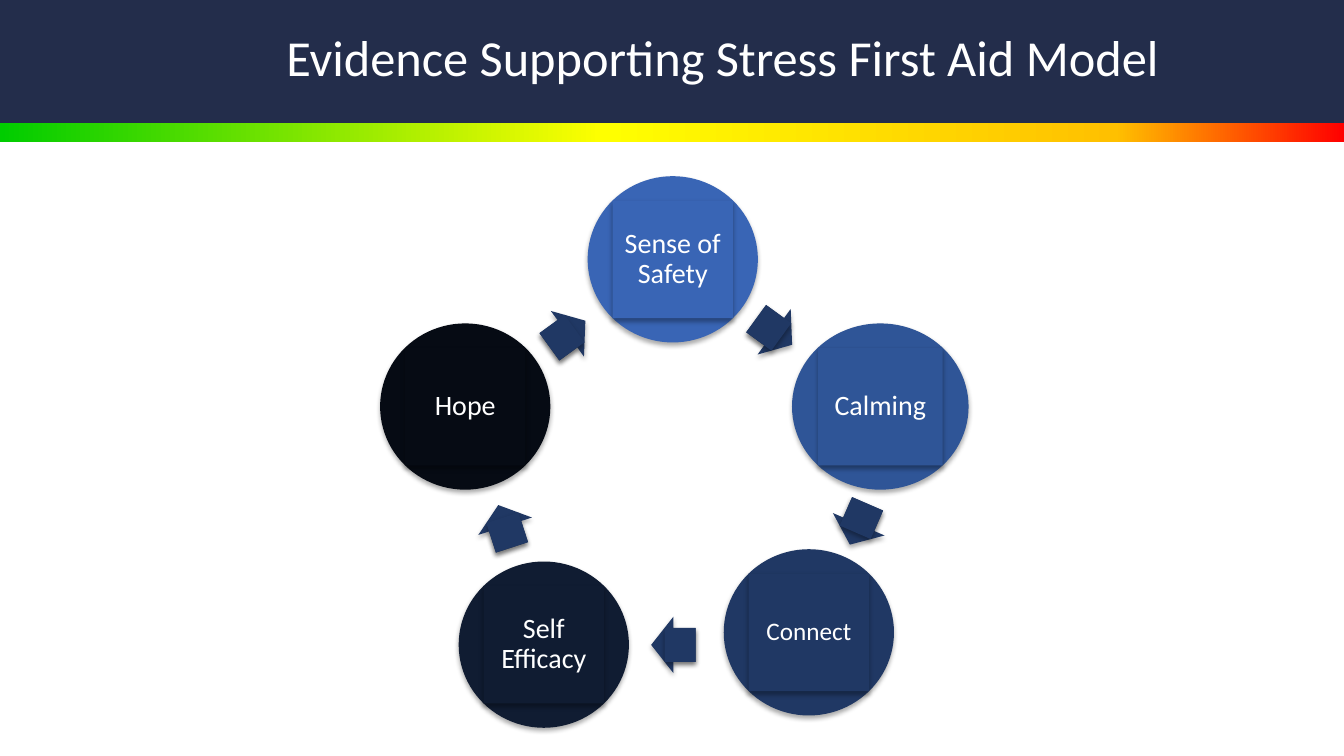
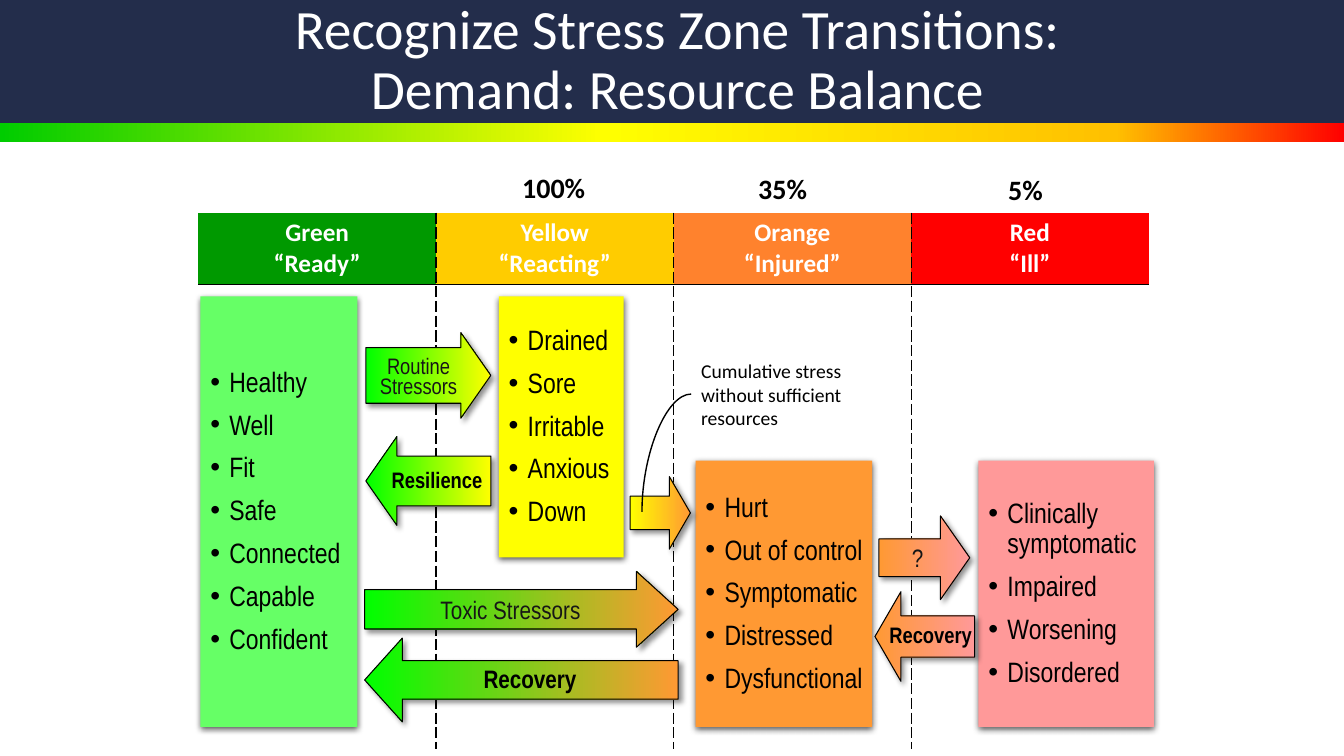
import math
from dataclasses import dataclass
from typing import Optional, Sequence

from lxml import etree
from pptx import Presentation
from pptx import util as u
from pptx.dml.color import RGBColor
from pptx.enum import shapes, text
from pptx.oxml.ns import qn

Cm, Pt = u.Cm, u.Pt
PRESET, ALIGN, ANCHOR = shapes.MSO_SHAPE, text.PP_ALIGN, text.MSO_ANCHOR
BODY_FONT, ZONE_FONT = "Calibri", "Arial Narrow"
NO_TABLE_STYLE = "{2D5ABB26-0587-4C30-8999-92F81FD0307C}"
COLORS = {
    "navy": "232D4B", "white": "FFFFFF", "black": "000000", "ink": "161616",
    "safety": "3965B5", "calming": "2F5597", "connect": "203864",
    "efficacy": "101C32", "hope": "060B14",
    "green head": "009900", "yellow head": "FFCC00", "orange head": "FF822D", "red": "FF0000",
    "green list": "66FF66", "yellow": "FFFF00", "orange": "FF9933", "pink": "FF9999",
    "lime": "00FF00", "band green": "00CC00", "band amber": "FFC000",
}
SPECTRUM = [(0, "band green"), (45, "yellow"), (83, "band amber"), (100, "red")]


@dataclass(frozen=True)
class Box:
    left: float
    top: float
    width: float
    height: float

    def lengths(self) -> tuple:
        return Cm(self.left), Cm(self.top), Cm(self.width), Cm(self.height)


@dataclass(frozen=True)
class Shadow:
    alpha: int
    blur: float
    distance: float
    angle: int


@dataclass(frozen=True)
class Style:
    size: float
    color: str = "black"
    font: str = BODY_FONT
    bold: bool = False
    align: ALIGN = ALIGN.CENTER
    spacing: float = 0.9


@dataclass(frozen=True)
class Step:
    label: str
    box: Box
    color: str
    size: int = 20


@dataclass(frozen=True)
class CycleArrow:
    left: float
    top: float
    angle: float


@dataclass(frozen=True)
class Zone:
    name: str
    state: str
    head_color: str
    list_color: str
    box: Box
    signs: Sequence[str]
    wrap: bool = False


@dataclass(frozen=True)
class Transition:
    label: str
    box: Box
    start: str
    end: str
    shaft: float
    head: float
    size: int = 18
    back: bool = False


CYCLE_SHADOW = Shadow(32, 3.5, 2.2, 90)
LIST_SHADOW = Shadow(63, 4.5, 1.5, 90)
ARROW_SHADOW = Shadow(43, 4, 3, 45)

STEPS = [
    Step("Sense of Safety", Box(14.81, 4.44, 4.29, 4.19), "safety"),
    Step("Calming", Box(19.96, 8.15, 4.45, 4.19), "calming"),
    Step("Connect", Box(18.24, 13.84, 4.29, 4.19), "connect", 18),
    Step("Self Efficacy", Box(11.56, 14.15, 4.29, 4.19), "efficacy"),
    Step("Hope", Box(9.58, 8.15, 4.29, 4.19), "hope"),
]
CYCLE_ARROWS = [
    CycleArrow(18.95, 7.65, 36), CycleArrow(21.08, 12.5, 113.5), CycleArrow(16.41, 15.54, 180),
    CycleArrow(12.17, 12.55, 252), CycleArrow(13.74, 7.7, 324),
]
ZONES = [
    Zone("Green", "“Ready”", "green head", "green list", Box(5.05, 7.47, 3.96, 10.85),
         ["Healthy", "Well", "Fit", "Safe", "Connected", "Capable", "Confident"]),
    Zone("Yellow", "“Reacting”", "yellow head", "yellow", Box(12.57, 7.47, 3.15, 6.58),
         ["Drained", "Sore", "Irritable", "Anxious", "Down"]),
    Zone("Orange", "“Injured”", "orange head", "orange", Box(17.53, 11.61, 4.45, 6.71),
         ["Hurt", "Out of control", "Symptomatic", "Distressed", "Dysfunctional"]),
    Zone("Red", "“Ill”", "red", "pink", Box(24.66, 11.61, 4.42, 6.71),
         ["Clinically symptomatic", "Impaired", "Worsening", "Disordered"], wrap=True),
]
TRANSITIONS = [
    Transition("Routine Stressors", Box(9.22, 8.38, 3.15, 2.16), "lime", "yellow", 0.65, 0.35, 16),
    Transition("Toxic Stressors", Box(9.19, 14.4, 7.9, 1.91), "lime", "orange", 0.52, 0.55),
    Transition("Resilience", Box(9.22, 11, 3.15, 2.24), "lime", "yellow", 0.56, 0.35, 16, True),
    Transition("Recovery", Box(9.19, 16.08, 7.9, 2.11), "lime", "orange", 0.46, 0.45, 18, True),
    Transition("", Box(15.88, 12.01, 1.52, 1.83), "yellow", "orange", 0.46, 0.35),
    Transition("?", Box(22.15, 13, 2.29, 2.11), "orange", "pink", 0.45, 0.35),
    Transition("Recovery", Box(22.05, 14.91, 2.51, 2.26), "orange", "pink", 0.46, 0.29, 16, True),
]
SHARES = [("100%", 11.15, 4.27), ("35%", 16.92, 4.29), ("5%", 23.04, 4.32)]


def rgb(color: str) -> RGBColor:
    return RGBColor.from_string(COLORS[color])


def add_color(parent, color: str):
    return etree.SubElement(parent, qn("a:srgbClr"), val=COLORS[color])


def paint_gradient(shape, stops: Sequence[tuple]) -> None:
    shape.fill.gradient()
    shape.fill.gradient_angle = 0
    stop_list = shape.element.find(".//" + qn("a:gsLst"))
    for old_stop in list(stop_list):
        stop_list.remove(old_stop)
    for percent, color in stops:
        add_color(etree.SubElement(stop_list, qn("a:gs"), pos=str(percent * 1000)), color)


def cast_shadow(shape, shadow: Shadow) -> None:
    effects = shape.element.spPr.find(qn("a:effectLst"))
    outer = etree.SubElement(
        effects, qn("a:outerShdw"), blurRad=str(int(Pt(shadow.blur))),
        dist=str(int(Pt(shadow.distance))), dir=str(shadow.angle * 60000),
        algn="ctr", rotWithShape="0")
    etree.SubElement(add_color(outer, "black"), qn("a:alpha"), val=str(shadow.alpha * 1000))


def add_figure(slide, preset, box: Box, color: Optional[str] = None,
               shadow: Optional[Shadow] = None, angle: float = 0):
    figure = slide.shapes.add_shape(preset, *box.lengths())
    figure.rotation = angle
    figure.line.fill.background()
    figure.shadow.inherit = False
    if color:
        figure.fill.solid()
        figure.fill.fore_color.rgb = rgb(color)
    if shadow:
        cast_shadow(figure, shadow)
    return figure


def style_paragraph(paragraph, style: Style) -> None:
    paragraph.alignment = style.align
    paragraph.line_spacing = style.spacing
    font = paragraph.font
    font.name, font.size, font.bold = style.font, Pt(style.size), style.bold
    font.color.rgb = rgb(style.color)


def write(frame, lines: Sequence[str], style: Style, anchor=ANCHOR.MIDDLE,
          wrap: bool = True, bulleted: bool = False) -> None:
    frame.word_wrap = wrap
    frame.vertical_anchor = anchor
    for index, line in enumerate(lines):
        paragraph = frame.paragraphs[0] if index == 0 else frame.add_paragraph()
        paragraph.text = line
        if bulleted:
            add_bullet(paragraph)
            paragraph.space_before = Pt(9 if index else 0)
        style_paragraph(paragraph, style)


def add_bullet(paragraph) -> None:
    properties = paragraph._p.get_or_add_pPr()
    indent = int(Cm(0.48))
    properties.set("marL", str(indent))
    properties.set("indent", str(-indent))
    add_color(etree.SubElement(properties, qn("a:buClr")), "black")
    etree.SubElement(properties, qn("a:buFont"), typeface="Arial")
    etree.SubElement(properties, qn("a:buChar"), char="•")


def add_label(slide, box: Box, label: str, style: Style):
    caption = slide.shapes.add_textbox(*box.lengths())
    write(caption.text_frame, [label], style, ANCHOR.TOP)


def add_titled_slide(prs, lines: Sequence[str], box: Box, style: Style):
    slide = prs.slides.add_slide(prs.slide_layouts[5])
    title = slide.shapes.title
    title.left, title.top, title.width, title.height = box.lengths()
    frame = title.text_frame
    frame.auto_size = text.MSO_AUTO_SIZE.NONE
    frame.vertical_anchor = ANCHOR.MIDDLE
    paragraph = frame.paragraphs[0]
    for index, line in enumerate(lines):
        if index:
            paragraph.add_line_break()
        paragraph.add_run().text = line
    style_paragraph(paragraph, style)
    return slide


def move_bands_to_layout(slide) -> None:
    spectrum = add_figure(slide, PRESET.RECTANGLE, Box(0, 3.1, 33.87, 0.48))
    paint_gradient(spectrum, SPECTRUM)
    header = add_figure(slide, PRESET.RECTANGLE, Box(0, 0, 33.87, 3.1), "navy")
    for position, band in enumerate((spectrum, header), start=2):
        slide.slide_layout.shapes.element.insert(position, band.element)


def add_step(slide, step: Step) -> None:
    box, inset = step.box, (1 - math.sqrt(0.5)) / 2
    add_figure(slide, PRESET.OVAL, box, step.color, CYCLE_SHADOW)
    inner = Box(box.left + box.width * inset, box.top + box.height * inset,
                box.width * (1 - 2 * inset), box.height * (1 - 2 * inset))
    panel = add_figure(slide, PRESET.RECTANGLE, inner, step.color, CYCLE_SHADOW)
    frame = panel.text_frame
    frame.margin_left = frame.margin_right = frame.margin_top = frame.margin_bottom = Cm(0.08)
    write(frame, [step.label], Style(step.size, "white"))


def add_cycle_arrow(slide, arrow: CycleArrow) -> None:
    width, height = 1.12, 1.42
    outline = add_figure(slide, PRESET.RIGHT_ARROW, Box(arrow.left, arrow.top, width, height),
                         "connect", CYCLE_SHADOW, arrow.angle)
    outline.adjustments[0], outline.adjustments[1] = 0.6, 0.5
    turn, setback = math.radians(arrow.angle), 0.15 * width
    core = Box(arrow.left + 0.15 * width - setback * math.cos(turn),
               arrow.top + 0.2 * height - setback * math.sin(turn), 0.7 * width, 0.6 * height)
    add_figure(slide, PRESET.RECTANGLE, core, "connect", CYCLE_SHADOW, arrow.angle)


def add_border(cell, side: str, dash: str) -> None:
    border = etree.SubElement(cell._tc.get_or_add_tcPr(), qn("a:" + side), w=str(int(Pt(1))))
    add_color(etree.SubElement(border, qn("a:solidFill")), "black")
    etree.SubElement(border, qn("a:prstDash"), val=dash)


def add_zone_table(slide) -> None:
    grid = Box(5, 3.91, 23.95, 14.94)
    table = slide.shapes.add_table(3, len(ZONES), *grid.lengths()).table
    table.first_row = table.horz_banding = False
    table._tbl.tblPr.find(qn("a:tableStyleId")).text = NO_TABLE_STYLE
    for row, height in zip(table.rows, (1.45, 1.78, 11.71)):
        row.height = Cm(height)
    table.cell(0, 0).merge(table.cell(0, len(ZONES) - 1))
    for column, zone in enumerate(ZONES):
        table.columns[column].width = Cm(grid.width / len(ZONES))
        head, body = table.cell(1, column), table.cell(2, column)
        for cell in (head, body):
            if column > 0:
                add_border(cell, "lnL", "sysDash")
            if column < len(ZONES) - 1:
                add_border(cell, "lnR", "sysDash")
        add_border(head, "lnB", "solid")
        add_border(body, "lnT", "solid")
        head.fill.solid()
        head.fill.fore_color.rgb = rgb(zone.head_color)
        body.fill.background()
        table.cell(0, column).fill.background()
        head.vertical_anchor = ANCHOR.MIDDLE
        write(head.text_frame, [zone.name, zone.state],
              Style(18, "white", bold=True, spacing=1.0))


def add_zone_list(slide, zone: Zone) -> None:
    panel = add_figure(slide, PRESET.RECTANGLE, zone.box, zone.list_color, LIST_SHADOW)
    write(panel.text_frame, zone.signs, Style(20, font=ZONE_FONT, align=ALIGN.LEFT),
          wrap=zone.wrap, bulleted=True)


def add_transition(slide, move: Transition) -> None:
    preset = PRESET.LEFT_ARROW if move.back else PRESET.RIGHT_ARROW
    arrow = add_figure(slide, preset, move.box, shadow=ARROW_SHADOW)
    arrow.adjustments[0], arrow.adjustments[1] = move.shaft, move.head
    paint_gradient(arrow, [(0, move.start), (100, move.end)])
    arrow.line.color.rgb = rgb("black")
    arrow.line.width = Pt(0.75)
    if move.label and move.back:
        write(arrow.text_frame, [move.label], Style(move.size, font=ZONE_FONT, bold=True), wrap=False)
    elif move.label:
        write(arrow.text_frame, [move.label], Style(move.size, "ink", ZONE_FONT, spacing=0.75),
              ANCHOR.BOTTOM)


def add_note_curve(slide) -> None:
    curve = slide.shapes.add_connector(
        shapes.MSO_CONNECTOR.CURVE, Cm(17.42), Cm(9.93), Cm(16.18), Cm(12.9))
    curve.line.color.rgb = rgb("black")
    curve.line.width = Pt(1)
    properties = curve.element.spPr
    properties.find(qn("a:prstGeom")).set("prst", "curvedConnector2")
    etree.SubElement(properties, qn("a:effectLst"))


def main() -> None:
    prs = Presentation()
    prs.slide_width, prs.slide_height = Cm(33.87), Cm(19.05)

    cycle = add_titled_slide(prs, ["Evidence Supporting Stress First Aid Model"],
                             Box(6.96, 0.13, 23.72, 2.79), Style(36, "white", align=ALIGN.LEFT))
    move_bands_to_layout(cycle)
    for step in STEPS:
        add_step(cycle, step)
    for arrow in CYCLE_ARROWS:
        add_cycle_arrow(cycle, arrow)

    balance = add_titled_slide(
        prs, ["Recognize Stress Zone Transitions:", "Demand: Resource Balance"],
        Box(2.39, 0.15, 29.36, 2.79), Style(39.6, "white"))
    add_zone_table(balance)
    for zone in ZONES:
        add_zone_list(balance, zone)
    for move in TRANSITIONS:
        add_transition(balance, move)
    add_label(balance, Box(17.42, 8.92, 4.65, 2.06), "Cumulative stress without sufficient resources",
              Style(14, align=ALIGN.LEFT, spacing=1.0))
    add_note_curve(balance)
    for share, left, top in SHARES:
        add_label(balance, Box(left, top, 5.61, 1.04), share, Style(20, bold=True))

    prs.save("out.pptx")


if __name__ == "__main__":
    main()
